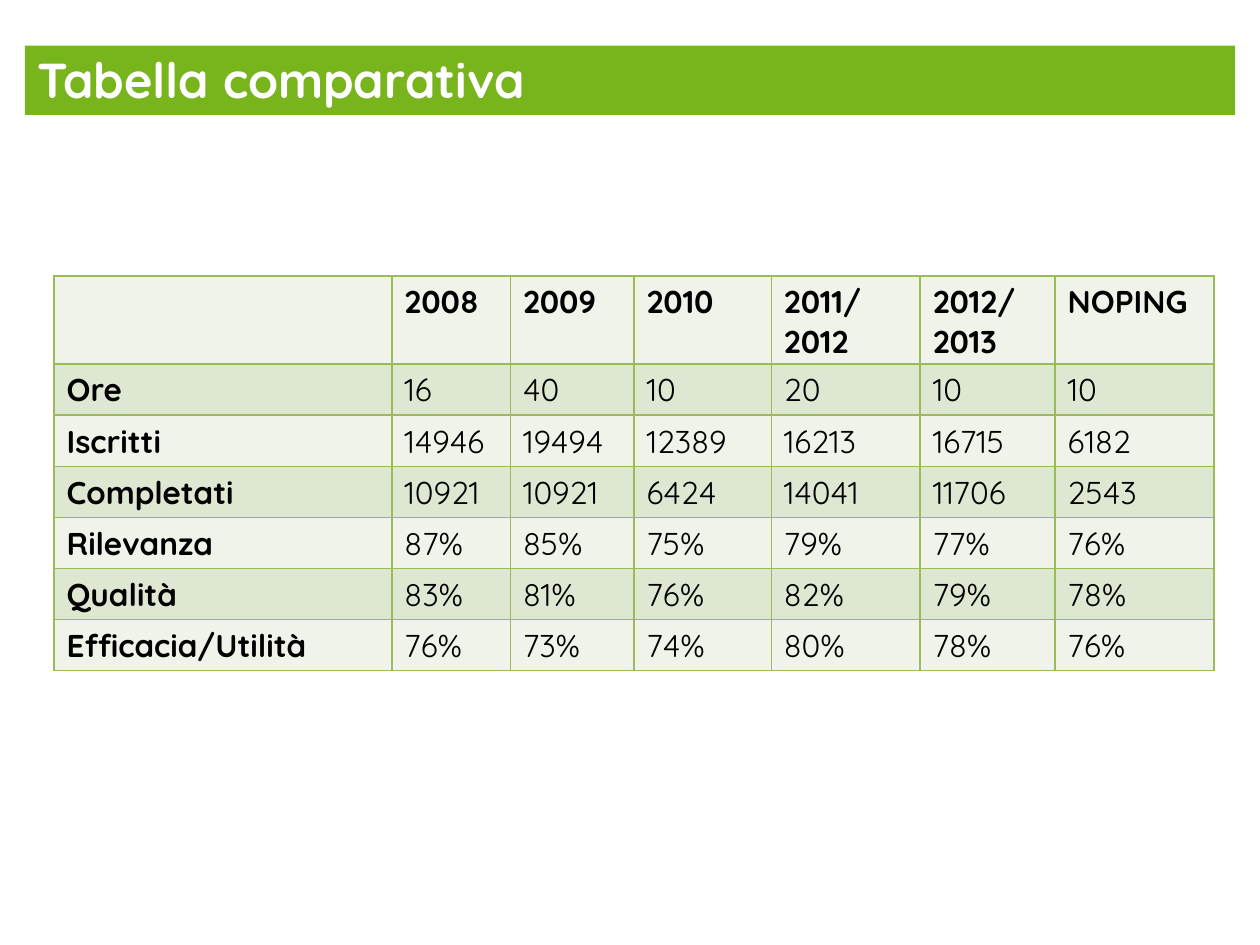
from lxml import etree
from pptx import Presentation
from pptx.dml.color import RGBColor
from pptx.enum.shapes import MSO_SHAPE
from pptx.enum.text import MSO_ANCHOR, MSO_AUTO_SIZE, PP_ALIGN
from pptx.oxml.ns import qn
from pptx.util import Cm, Pt

RECTANGLE = MSO_SHAPE.RECTANGLE
MIDDLE = MSO_ANCHOR.MIDDLE
FIT_SHAPE = MSO_AUTO_SIZE.SHAPE_TO_FIT_TEXT
LEFT = PP_ALIGN.LEFT

THEME = {
    "font": "Quicksand",
    "band": RGBColor.from_string("78B51D"),
    "title": RGBColor.from_string("FFFFFF"),
    "text": RGBColor.from_string("000000"),
    "rows": [RGBColor.from_string("EFF3EA"), RGBColor.from_string("DEE7D1")],
    "border": "9BBB59",
    "title_size": Pt(28),
    "table_size": Pt(18),
}

COMPARISON = [
    ["", "2008", "2009", "2010", "2011/\n2012", "2012/\n2013", "NOPING"],
    ["Ore", "16", "40", "10", "20", "10", "10"],
    ["Iscritti", "14946", "19494", "12389", "16213", "16715", "6182"],
    ["Completati", "10921", "10921", "6424", "14041", "11706", "2543"],
    ["Rilevanza", "87%", "85%", "75%", "79%", "77%", "76%"],
    ["Qualità", "83%", "81%", "76%", "82%", "79%", "78%"],
    ["Efficacia/Utilità", "76%", "73%", "74%", "80%", "78%", "76%"],
]
COLUMN_WIDTHS = [6.81, 2.39, 2.49, 2.77, 3.0, 2.72, 3.2]
ROW_HEIGHTS = [1.78] + [1.03] * 6


def set_font(font, size, color, bold):
    values = {"name": THEME["font"], "size": size, "bold": bold}
    for attribute, value in values.items():
        setattr(font, attribute, value)
    font.color.rgb = color


def add_borders(cell):
    properties = cell._tc.get_or_add_tcPr()
    for position, side in enumerate(("lnL", "lnR", "lnT", "lnB")):
        line = etree.Element(qn(f"a:{side}"), w=str(Pt(1)))
        fill = etree.SubElement(line, qn("a:solidFill"))
        etree.SubElement(fill, qn("a:srgbClr"), val=THEME["border"])
        properties.insert(position, line)


presentation = Presentation()
presentation.slide_width = Cm(25.4)
presentation.slide_height = Cm(19.05)
slide = presentation.slides.add_slide(presentation.slide_layouts[5])

# Green band, behind the title
band = slide.shapes.add_shape(RECTANGLE, Cm(0.5), Cm(0.92), Cm(24.4), Cm(1.4))
band.shadow.inherit = False
band.fill.solid()
band.fill.fore_color.rgb = THEME["band"]
band.line.fill.background()
slide.shapes._spTree.insert(2, band._element)

# Title
title = slide.shapes.title
title_place = {"left": Cm(0.5), "top": Cm(0.87), "width": Cm(10.57), "height": Cm(1.45)}
for attribute, value in title_place.items():
    setattr(title, attribute, value)
title_format = {"word_wrap": False, "auto_size": FIT_SHAPE, "vertical_anchor": MIDDLE}
for attribute, value in title_format.items():
    setattr(title.text_frame, attribute, value)
heading = title.text_frame.paragraphs[0]
heading.text = "Tabella comparativa"
heading.alignment = LEFT
set_font(heading.runs[0].font, THEME["title_size"], THEME["title"], True)

# Comparison table
table = slide.shapes.add_table(
    len(COMPARISON), len(COLUMN_WIDTHS), Cm(1.09), Cm(5.56),
    Cm(sum(COLUMN_WIDTHS)), Cm(sum(ROW_HEIGHTS))).table
for column, width in zip(table.columns, COLUMN_WIDTHS):
    column.width = Cm(width)
for row, height in zip(table.rows, ROW_HEIGHTS):
    row.height = Cm(height)

for row_index, entries in enumerate(COMPARISON):
    for column_index, entry in enumerate(entries):
        cell = table.cell(row_index, column_index)
        cell.fill.solid()
        cell.fill.fore_color.rgb = THEME["rows"][row_index % 2]
        add_borders(cell)
        paragraph = cell.text_frame.paragraphs[0]
        paragraph.text = entry
        is_label = row_index == 0 or column_index == 0
        for run in paragraph.runs:
            set_font(run.font, THEME["table_size"], THEME["text"], is_label)

presentation.save("out.pptx")
